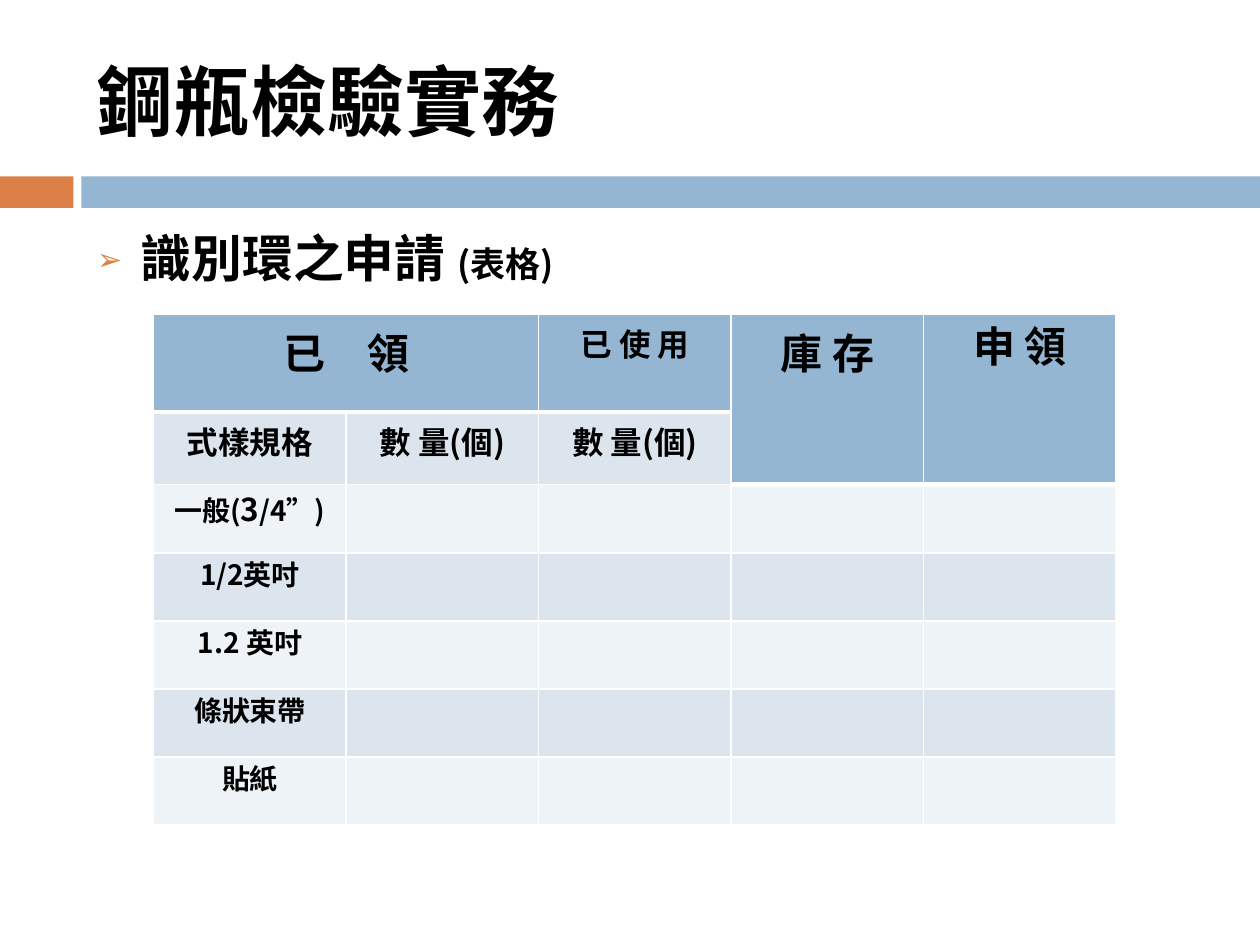
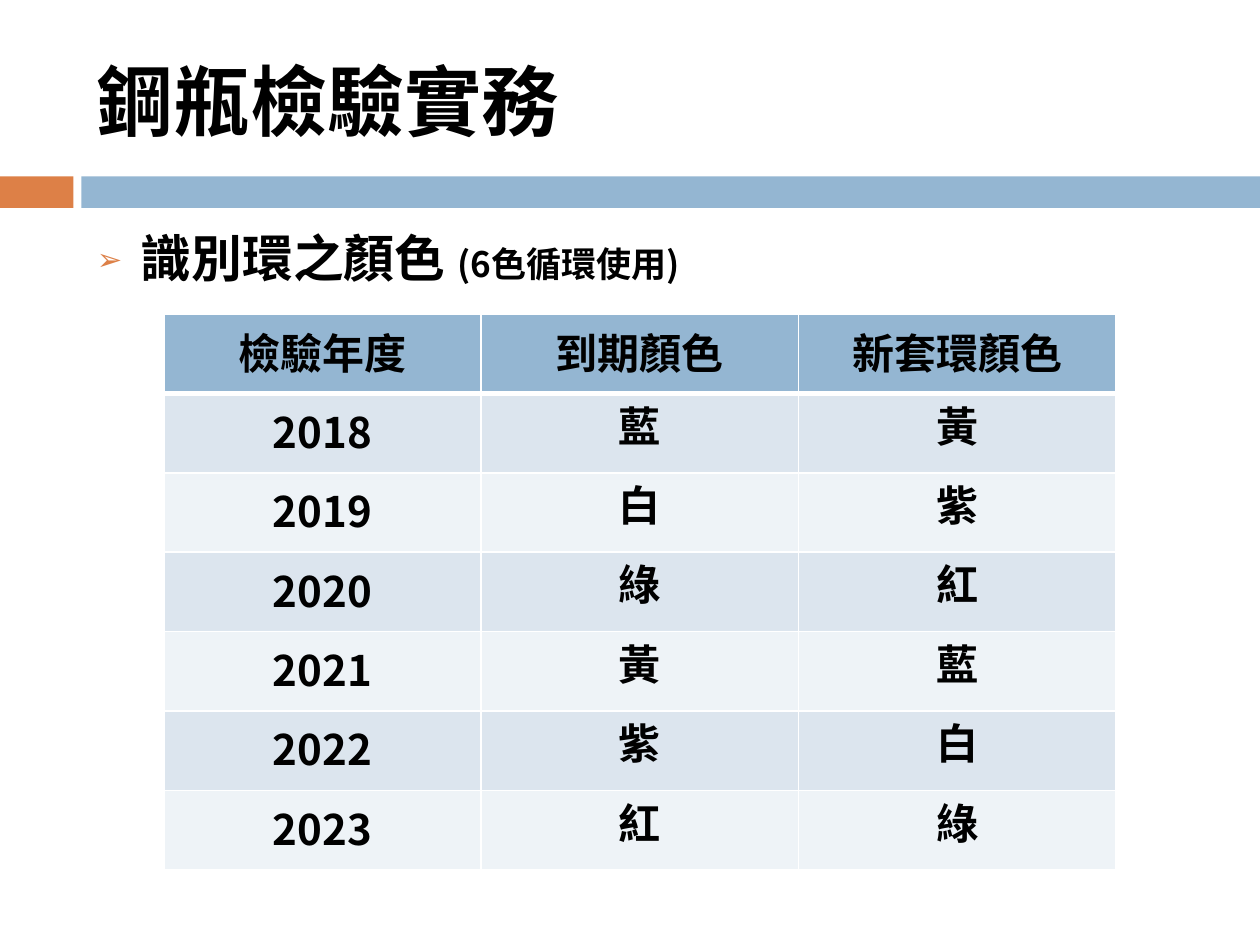
from lxml.etree import SubElement
from pptx import Presentation
from pptx.dml.color import RGBColor
from pptx.enum.shapes import MSO_SHAPE
from pptx.enum.text import MSO_ANCHOR, PP_ALIGN
from pptx.oxml.ns import qn
from pptx.util import Pt

BLUE, ORANGE, BLACK, WHITE = "94B6D2", "DD8047", "000000", "FFFFFF"
BANDS = ["EEF3F7", "DCE5EE"]
SANS, SERIF = "Noto Sans CJK SC", "Times New Roman"
ROOMY, SNUG, TIGHT = (7.2, 3.6), (5, 0), (1.5, 0)


def paint(target, color):
    target.solid()
    target.fore_color.rgb = RGBColor.from_string(color)


class Deck:
    """Holds the shared style and the current slide."""

    def __init__(self):
        self.prs = Presentation()
        self.prs.slide_width, self.prs.slide_height = Pt(720), Pt(540)

    def new_slide(self, title):
        self.slide = self.prs.slides.add_slide(self.prs.slide_layouts[6])
        self.band(0, 42, ORANGE)
        self.band(46.5, 673.5, BLUE)
        self.text_box(18, 78, [(title, 44)], MSO_ANCHOR.MIDDLE)

    def band(self, left, width, color):
        bar = self.slide.shapes.add_shape(
            MSO_SHAPE.RECTANGLE, Pt(left), Pt(100.8), Pt(width), Pt(18))
        bar.shadow.inherit = False
        paint(bar.fill, color)
        bar.line.fill.background()

    def add_runs(self, paragraph, pieces, font=SANS):
        for text, size in pieces:
            run = paragraph.add_run()
            run.text = text
            run.font.size, run.font.bold, run.font.name = Pt(size), True, font
            paint(run.font.fill, BLACK)
            SubElement(run._r.get_or_add_rPr(), qn("a:ea"), typeface=SANS)

    def text_box(self, top, height, pieces, anchor=MSO_ANCHOR.TOP):
        frame = self.slide.shapes.add_textbox(
            Pt(48.24), Pt(top), Pt(642), Pt(height)).text_frame
        frame.word_wrap, frame.vertical_anchor = True, anchor
        self.add_runs(frame.paragraphs[0], pieces)
        return frame.paragraphs[0]

    def topic(self, heading, remark):
        paragraph = self.text_box(126, 354, [(heading + " ", 29), (remark, 20)])
        paragraph.space_before = Pt(7)
        props = paragraph._p.get_or_add_pPr()
        props.set("marL", str(Pt(25.2)))
        props.set("indent", str(-Pt(25.2)))
        bullet_color = SubElement(props, qn("a:buClr"))
        SubElement(bullet_color, qn("a:srgbClr"), val=ORANGE)
        SubElement(props, qn("a:buSzPct"), val="60000")
        SubElement(props, qn("a:buFont"), typeface=SANS)
        SubElement(props, qn("a:buChar"), char="➢")

    def border(self, cell, side, width):
        edge = SubElement(cell._tc.get_or_add_tcPr(), qn(f"a:ln{side}"), w=str(Pt(width)))
        SubElement(SubElement(edge, qn("a:solidFill")), qn("a:srgbClr"), val=WHITE)

    def table(self, left, column_width, heights, header_depths):
        """Header depths give the number of header rows in each column."""
        columns = len(header_depths)
        grid = self.slide.shapes.add_table(
            len(heights), columns, Pt(left), Pt(179.5),
            Pt(column_width * columns), Pt(sum(heights))).table
        for column in grid.columns:
            column.width = Pt(column_width)
        for r, height in enumerate(heights):
            grid.rows[r].height = Pt(height)
            for c, depth in enumerate(header_depths):
                cell = grid.cell(r, c)
                for side, heavy in (("L", False), ("R", False),
                                    ("T", r == depth), ("B", r < depth)):
                    self.border(cell, side, 3 if heavy else 1)
                paint(cell.fill, BLUE if r < depth else BANDS[r % 2])
        return grid

    def fill_cell(self, cell, pieces, inset=ROOMY, font=SANS):
        cell.margin_left = cell.margin_right = Pt(inset[0])
        cell.margin_top = cell.margin_bottom = Pt(inset[1])
        paragraph = cell.text_frame.paragraphs[0]
        paragraph.alignment = PP_ALIGN.CENTER
        self.add_runs(paragraph, pieces, font)


def ring_application(deck):
    deck.new_slide("鋼瓶檢驗實務")
    deck.topic("識別環之申請", "(表格)")
    form = deck.table(87.84, 110, [56] + [41.5] + [38.9] * 5, [1, 1, 1, 2, 2])

    # Headers spanning columns or rows
    form.cell(0, 0).merge(form.cell(0, 1))
    for column in (3, 4):
        form.cell(0, column).merge(form.cell(1, column))
    for column, name, size, inset in (
            (0, "已　領", 24, ROOMY), (2, "已 使 用", 18, ROOMY),
            (3, "庫 存", 24, ROOMY), (4, "申 領", 24, TIGHT)):
        deck.fill_cell(form.cell(0, column), [(name, size)], inset)
    for column, name in enumerate(["式樣規格", "數 量(個)", "數 量(個)"]):
        deck.fill_cell(form.cell(1, column), [(name, 18)])

    # Ring kinds
    kinds = [[("一般(", 16), ("3", 18), ("/4”)", 16)]]
    kinds += [[(name, 16)] for name in ("1/2英吋", "1.2 英吋", "條狀束帶", "貼紙")]
    for row, kind in enumerate(kinds, 2):
        deck.fill_cell(form.cell(row, 0), kind, TIGHT)


def ring_colors(deck):
    deck.new_slide("鋼瓶檢驗實務")
    deck.topic("識別環之顏色", "(6色循環使用)")
    cycle = deck.table(93.6, 181.4, [45.36] * 7, [1, 1, 1])
    for column, name in enumerate(["檢驗年度", "到期顏色", "新套環顏色"]):
        deck.fill_cell(cycle.cell(0, column), [(name, 24)])

    # Each new colour is the one expiring three years later
    expiring = "藍白綠黃紫紅"
    for i, color in enumerate(expiring):
        deck.fill_cell(cycle.cell(i + 1, 0), [(str(2018 + i), 24)])
        for column, shade in ((1, color), (2, expiring[(i + 3) % 6])):
            deck.fill_cell(cycle.cell(i + 1, column), [(shade, 24)], SNUG, SERIF)


def main():
    deck = Deck()
    ring_application(deck)
    ring_colors(deck)
    deck.prs.save("out.pptx")


if __name__ == "__main__":
    main()
